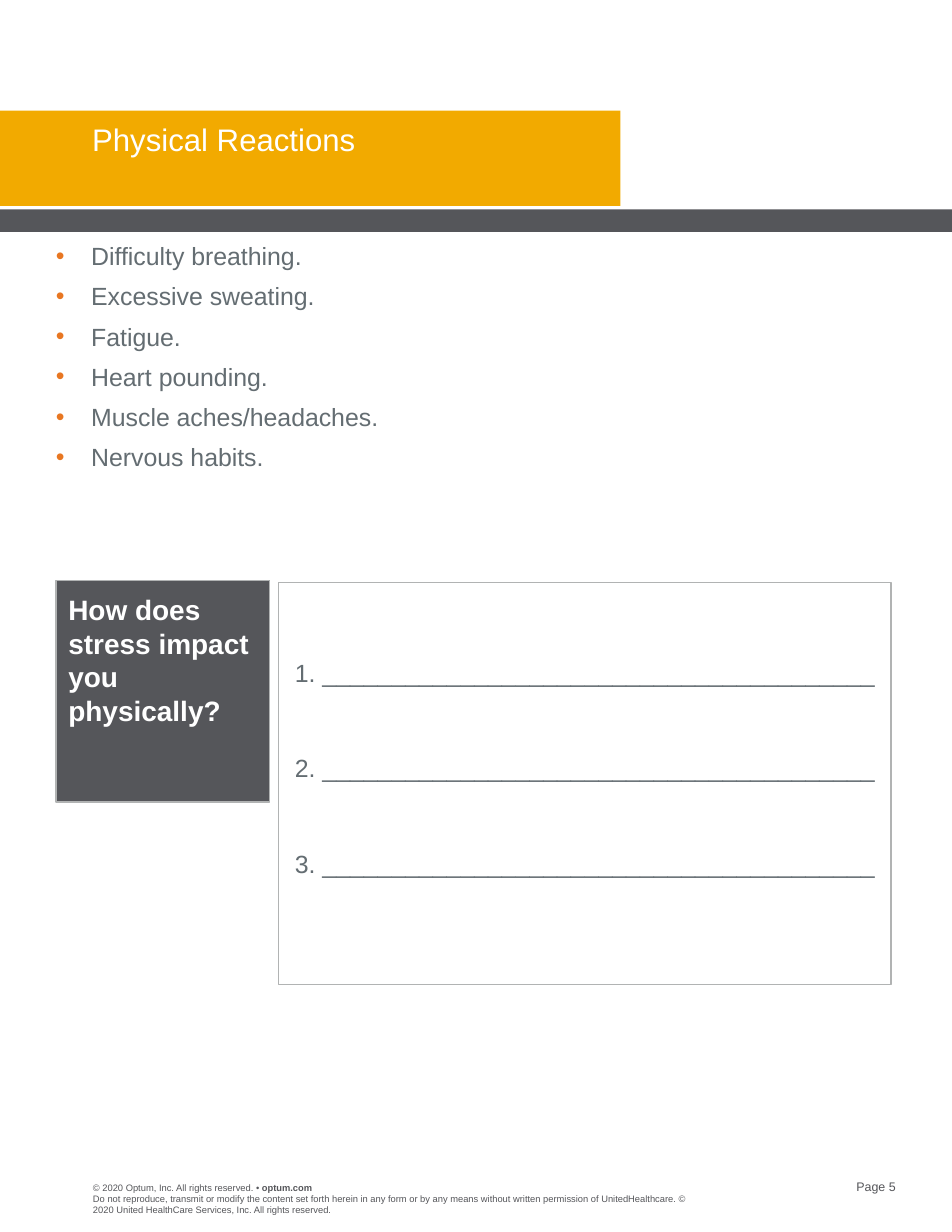
from lxml.etree import SubElement
from pptx import Presentation
from pptx.dml.color import RGBColor
from pptx.enum.shapes import MSO_SHAPE
from pptx.enum.text import MSO_ANCHOR, MSO_AUTO_SIZE, PP_ALIGN
from pptx.oxml.ns import qn
from pptx.util import Cm, Pt

GOLD = RGBColor(0xF2, 0xAA, 0x00)
DARK = RGBColor(0x55, 0x56, 0x5A)
GRAY = RGBColor(0x64, 0x6D, 0x72)
RULE = RGBColor(0xB1, 0xB3, 0xB3)
WHITE = RGBColor(0xFF, 0xFF, 0xFF)


def write(shape, lines, size, color, after=0, align=PP_ALIGN.LEFT, pad=(0, 0, 0, 0)):
    frame = shape.text_frame
    frame.text = "\n".join(lines)
    frame.word_wrap = True
    frame.auto_size = MSO_AUTO_SIZE.NONE
    frame.vertical_anchor = MSO_ANCHOR.TOP
    frame.margin_left, frame.margin_top, frame.margin_right, frame.margin_bottom = map(Cm, pad)
    for para in frame.paragraphs:
        para.alignment = align
        para.space_after = Pt(after)
        for run in para.runs:
            run.font.name = "Arial"
            run.font.size = Pt(size)
            run.font.color.rgb = color
    return frame


def block(box, fill=None, line=None):
    shape = slide.shapes.add_shape(MSO_SHAPE.RECTANGLE, *map(Cm, box))
    shape.shadow.inherit = False
    if fill:
        shape.fill.solid()
        shape.fill.fore_color.rgb = fill
    else:
        shape.fill.background()
    if line:
        shape.line.color.rgb = line
        shape.line.width = Pt(0.75)
    else:
        shape.line.fill.background()
    return shape


deck = Presentation()
deck.slide_width, deck.slide_height = Cm(21.59), Cm(27.94)
slide = deck.slides.add_slide(deck.slide_layouts[5])

# Header bands
block((0, 2.51, 14.07, 2.16), GOLD)
block((0, 4.75, 21.59, 0.51), DARK)

# Title, raised above the bands
title = slide.shapes.title
title.left, title.top, title.width, title.height = map(Cm, (2.09, 2.82, 11.43, 1.55))
frame = write(title, ["Physical Reactions"], 20, WHITE)
frame.paragraphs[0].line_spacing = 0.9
title.element.getparent().append(title.element)

# Bulleted reactions
signs = ["Difficulty breathing.", "Excessive sweating.", "Fatigue.",
         "Heart pounding.", "Muscle aches/headaches.", "Nervous habits."]
body = slide.shapes.add_textbox(*map(Cm, (1.27, 5.46, 18.95, 6.48)))
frame = write(body, signs, 16, GRAY, after=6.7)
for para in frame.paragraphs:
    props = para._p.get_or_add_pPr()
    props.set("marL", str(Cm(0.8)))
    props.set("indent", str(-Cm(0.8)))
    tint = SubElement(props, qn("a:buClr"))
    SubElement(tint, qn("a:srgbClr")).set("val", "E87722")
    SubElement(props, qn("a:buFont")).set("typeface", "Arial")
    SubElement(props, qn("a:buChar")).set("char", "•")

# Question panel
ask = block((1.27, 13.16, 4.85, 5.03), DARK, RULE)
frame = write(ask, ["How does stress impact you physically?"], 18, WHITE,
              after=6.7, pad=(0.28, 0.28, 0.28, 0.28))
frame.paragraphs[0].runs[0].font.bold = True

# Answer lines
reply = block((6.32, 13.21, 13.89, 9.12), line=RULE)
write(reply, [f"{num}. " + "_" * 40 for num in range(1, 4)], 16, GRAY,
      after=42.3, align=PP_ALIGN.CENTER, pad=(0.28, 1.7, 0.28, 0.36))

# Footer
legal = slide.shapes.add_textbox(*map(Cm, (2.11, 26.8, 5.08, 0.25)))
frame = write(legal, ["© 2020 Optum, Inc. All rights reserved. • "], 6, DARK)
site = frame.paragraphs[0].add_run()
site.text = "optum.com"
site.font.name, site.font.size, site.font.bold = "Arial", Pt(6), True
site.font.color.rgb = DARK

terms = slide.shapes.add_textbox(*map(Cm, (2.11, 27.05, 13.46, 0.51)))
write(terms, ["Do not reproduce, transmit or modify the content set forth herein in any form "
              "or by any means without written permission of UnitedHealthcare. "
              "© 2020 United HealthCare Services, Inc. All rights reserved."], 6, DARK)

page = slide.shapes.add_textbox(*map(Cm, (18.26, 26.75, 2.06, 0.33)))
write(page, ["Page 5"], 8, DARK, align=PP_ALIGN.RIGHT)

deck.save("out.pptx")
